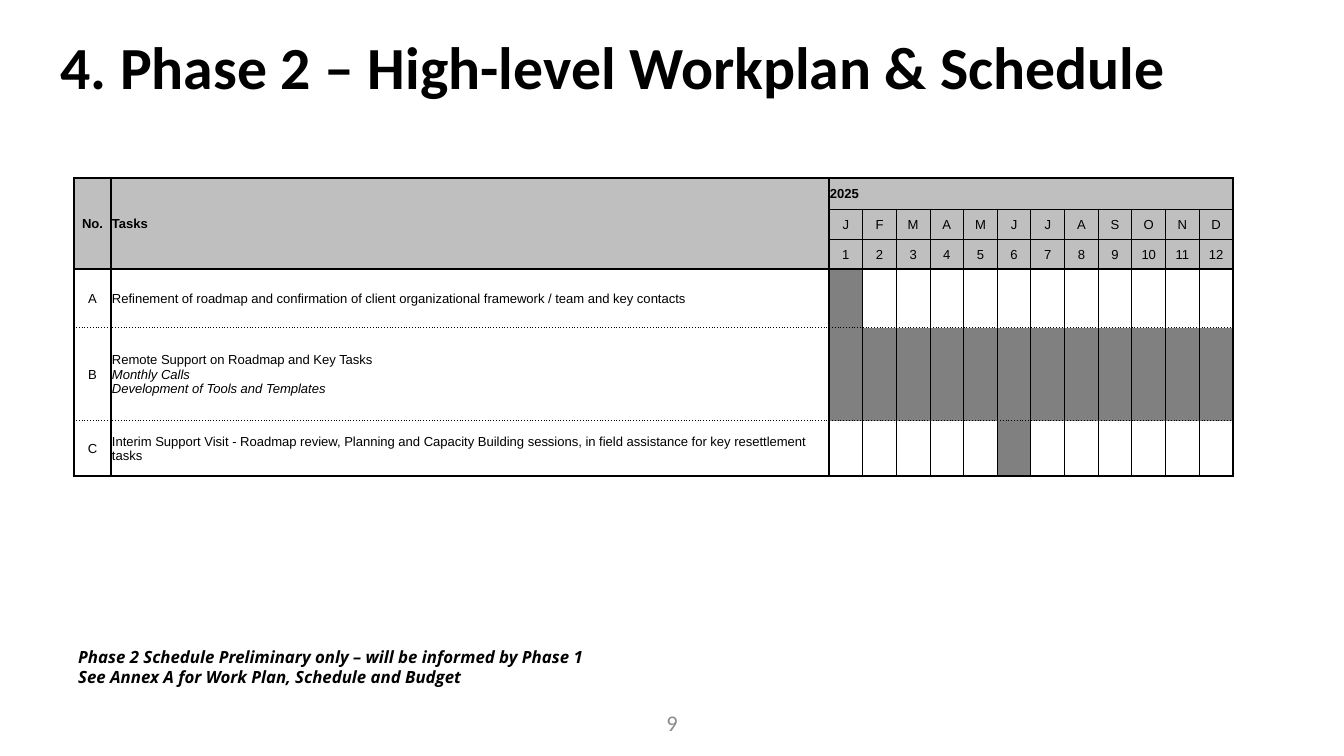
from lxml.etree import SubElement
from pptx import Presentation
from pptx.dml.color import RGBColor
from pptx.enum.text import MSO_ANCHOR as ANCHOR, MSO_AUTO_SIZE as AUTOSIZE, PP_ALIGN as ALIGN
from pptx.oxml.ns import qn
from pptx.util import Emu, Pt

PX = 914400 / 134.4
THIN, THICK, DOTTED = (0.5, "solid"), (1, "solid"), (0.5, "sysDot")
HEADER, ACTIVE = "BFBFBF", "808080"
FIRST_MONTH = 2
MONTHS = "JFMAMJJASOND"
HEADER_ROWS = 3
ROW_HEIGHTS = [31, 31, 29, 59, 93, 55]
ROW_EDGES = [THICK, THIN, THIN, THICK, DOTTED, DOTTED, THICK]
COLUMN_EDGES = [THICK] * 3 + [THIN] * 11 + [THICK]
TASKS = [
    ("A", ["Refinement of roadmap and confirmation of client organizational "
           "framework / team and key contacts"], [1]),
    ("B", ["Remote Support on Roadmap and Key Tasks", "Monthly Calls",
           "Development of Tools and Templates"], range(1, 13)),
    ("C", ["Interim Support Visit - Roadmap review, Planning and Capacity Building "
           "sessions, in field assistance for key resettlement tasks"], [6]),
]


def px(n):
    return Emu(round(n * PX))


def rgb(color):
    return RGBColor.from_string(color)


class Deck:
    def __init__(self, width, height):
        self.prs = Presentation()
        self.prs.slide_width, self.prs.slide_height = px(width), px(height)
        self.s = self.prs.slides.add_slide(self.prs.slide_layouts[5])

    def font(self, p, name, size, color="000000", bold=False, italic=False):
        f = p.font
        f.name, f.size, f.bold, f.italic = name, Pt(size), bold, italic
        f.color.rgb = rgb(color)

    def title(self, text, x, y, w, h):
        sp = self.s.shapes.title
        sp.left, sp.top, sp.width, sp.height = map(px, (x, y, w, h))
        tf = sp.text_frame
        tf.auto_size, tf.vertical_anchor = AUTOSIZE.NONE, ANCHOR.TOP
        p = tf.paragraphs[0]
        p.text, p.alignment, p.line_spacing = text, ALIGN.LEFT, 0.9
        self.font(p, "Calibri", 32, bold=True)

    def text(self, lines, x, y, w, h, name, size, align=ALIGN.LEFT, anchor=ANCHOR.TOP, **style):
        tf = self.s.shapes.add_textbox(*map(px, (x, y, w, h))).text_frame
        tf.word_wrap, tf.vertical_anchor = True, anchor
        tf.text = "\n".join(lines)
        for p in tf.paragraphs:
            p.alignment = align
            self.font(p, name, size, **style)

    def table(self, x, y, widths, heights):
        """Add an unstyled table whose widths are in EMU and heights in px."""
        frame = self.s.shapes.add_table(len(heights), len(widths), px(x), px(y),
                                        Emu(sum(widths)), px(sum(heights)))
        table = frame.table
        table.first_row = table.horz_banding = False
        for column, width in zip(table.columns, widths):
            column.width = width
        for row, height in zip(table.rows, heights):
            row.height = px(height)
        return table

    def cell(self, cell, lines, fill=None, align=ALIGN.LEFT, bold=False):
        """Fill a cell; lines after the first are italic."""
        cell.margin_left = cell.margin_right = cell.margin_top = px(1)
        cell.margin_bottom = 0
        cell.vertical_anchor = ANCHOR.MIDDLE
        p = cell.text_frame.paragraphs[0]
        p.alignment = align
        self.font(p, "Arial", 7, bold=bold)
        for i, line in enumerate(lines):
            if i:
                p.add_line_break()
            r = p.add_run()
            r.text = line
            if i:
                r.font.italic = True
        if fill:
            cell.fill.solid()
            cell.fill.fore_color.rgb = rgb(fill)
        else:
            cell.fill.background()

    def borders(self, cell, **sides):
        """Draw sides L, R, T and B, in that order, before the cell is filled."""
        tcPr = cell._tc.get_or_add_tcPr()
        for side, edge in sides.items():
            if edge is None:
                SubElement(SubElement(tcPr, qn(f"a:ln{side}"), w="0"), qn("a:noFill"))
                continue
            width, dash = edge
            ln = SubElement(tcPr, qn(f"a:ln{side}"), w=str(Pt(width)))
            SubElement(SubElement(ln, qn("a:solidFill")), qn("a:srgbClr"), val="000000")
            SubElement(ln, qn("a:prstDash"), val=dash)


def cell_content(row, col):
    """Return the lines, fill, alignment and weight of one schedule cell."""
    month = col - FIRST_MONTH + 1
    if row == 0:
        text = {0: "No.", 1: "Tasks", FIRST_MONTH: "2025"}.get(col)
        return [text] if text else [], HEADER, ALIGN.LEFT if col else ALIGN.CENTER, True
    if row < HEADER_ROWS:
        text = MONTHS[month - 1] if row == 1 else str(month)
        return [text] if month > 0 else [], HEADER, ALIGN.CENTER, False
    number, task, active = TASKS[row - HEADER_ROWS]
    if month > 0:
        return [], ACTIVE if month in active else None, ALIGN.CENTER, False
    return (task, None, ALIGN.LEFT, False) if col else ([number], None, ALIGN.CENTER, False)


def add_schedule(deck):
    widths = [px(37), px(718)] + [px(404) // 12] * 12
    table = deck.table(74, 178, widths, ROW_HEIGHTS)
    for col in range(FIRST_MONTH):
        table.cell(0, col).merge(table.cell(HEADER_ROWS - 1, col))
    table.cell(0, FIRST_MONTH).merge(table.cell(0, FIRST_MONTH + 1))

    for row in range(len(ROW_HEIGHTS)):
        for col in range(len(widths)):
            cell = table.cell(row, col)
            edges = list(COLUMN_EDGES)
            if row == 0:
                edges[FIRST_MONTH + 1:-1] = [None] * 11
            bottom = row + (cell.span_height if cell.is_merge_origin else 1)
            if not cell.is_spanned or row == 0:
                deck.borders(cell, L=edges[col], R=edges[col + 1],
                             T=ROW_EDGES[row], B=ROW_EDGES[bottom])
            deck.cell(cell, *cell_content(row, col))


def main():
    deck = Deck(1344, 756)
    deck.title("4. Phase 2 – High-level Workplan & Schedule", 47, 31, 1187, 60)
    deck.text(["9"], 521, 703, 302, 40, "Calibri", 12, ALIGN.CENTER, ANCHOR.MIDDLE,
              color="8C8C8C")
    deck.text(["Phase 2 Schedule Preliminary only – will be informed by Phase 1",
               "See Annex A for Work Plan, Schedule and Budget"],
              65, 640, 669, 54, "Open Sans", 9, bold=True, italic=True)
    add_schedule(deck)
    deck.prs.save("out.pptx")


if __name__ == "__main__":
    main()
